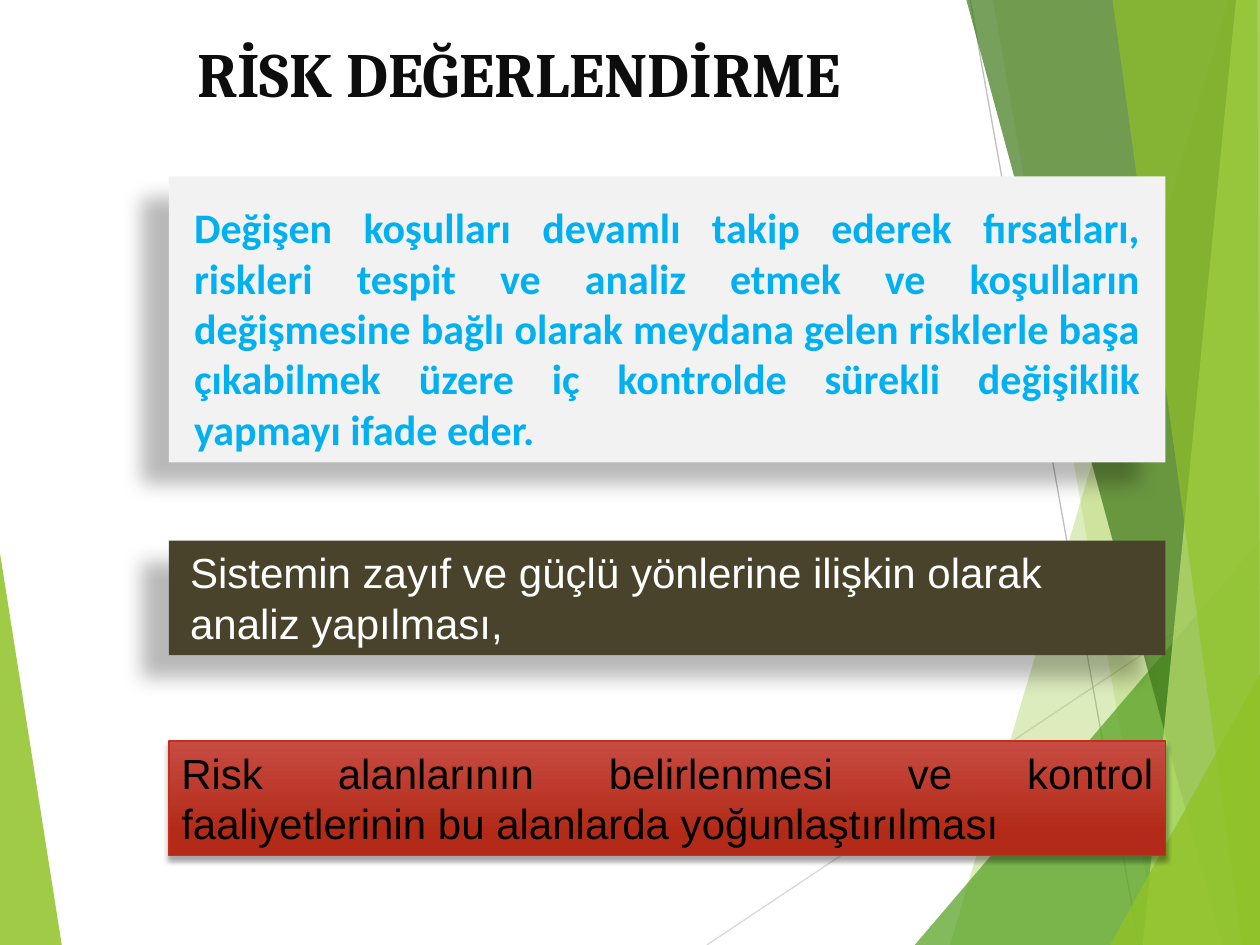
"""Build the risk assessment slide."""
from lxml import etree
from pptx import Presentation
from pptx.dml.color import RGBColor
from pptx.enum import shapes, text
from pptx.oxml.ns import qn
from pptx.util import Inches, Pt

FACETS = [
    ("90C226", 85, [(0, 4.39), (0.49, 7.5), (0, 7.5)]),
    ("90C226", 30, [(9.75, 0), (7.54, 7.5), (10, 7.5), (10, 0)]),
    ("90C226", 20, [(7.88, 0), (9.19, 7.5), (10, 7.5), (10, 0)]),
    ("54A021", 72, [(7.26, 7.5), (10, 4.29), (10, 7.5)]),
    ("3F7819", 70, [(7.67, 0), (9.7, 7.5), (10, 7.5), (10, 0)]),
    ("C0E474", 70, [(9.81, 0), (9.07, 7.5), (10, 7.5), (10, 0)]),
    ("90C226", 65, [(8.83, 0), (9.86, 7.5), (10, 7.5), (9.98, 0)]),
    ("90C226", 80, [(8.81, 7.5), (10, 5.35), (10, 7.5)]),
]
RAYS = [("D9D9D9", (5.61, 7.5), (10, 4.57)), ("BFBFBF", (7.7, 0), (9.04, 7.5))]
BOX_LEFT, BOX_WIDTH = 1.34, 7.91
DEEP_SHADOW = (28, 11.8, 19.7, 141)
SOFT_SHADOW = (35, 3, 2, 90)
DEFINITION = (
    "Değişen koşulları devamlı takip ederek fırsatları, riskleri tespit ve analiz "
    "etmek ve koşulların değişmesine bağlı olarak meydana gelen risklerle başa "
    "çıkabilmek üzere iç kontrolde sürekli değişiklik yapmayı ifade eder."
)
ANALYSIS = "Sistemin zayıf ve güçlü yönlerine ilişkin olarak analiz yapılması,"
FOCUS = ("Risk alanlarının belirlenmesi ve kontrol faaliyetlerinin "
         "bu alanlarda yoğunlaştırılması")


def color(value):
    """Turn a hex string into a colour."""
    return RGBColor.from_string(value)


def set_alpha(color_element, percent):
    """Set the opacity of a colour element."""
    etree.SubElement(color_element, qn("a:alpha")).set("val", str(percent * 1000))


def add_facet(slide, fill, opacity, points):
    """Draw one translucent polygon of the background."""
    corners = [(Inches(x), Inches(y)) for x, y in points]
    builder = slide.shapes.build_freeform(*corners[0])
    builder.add_line_segments(corners[1:])
    shape = builder.convert_to_shape()
    shape.shadow.inherit = False
    shape.fill.solid()
    shape.fill.fore_color.rgb = color(fill)
    set_alpha(shape._element.spPr.find(".//" + qn("a:srgbClr")), opacity)
    shape.line.fill.background()


def add_ray(slide, line_color, start, end):
    """Draw one thin background line."""
    points = [Inches(value) for value in start + end]
    ray = slide.shapes.add_connector(shapes.MSO_CONNECTOR.STRAIGHT, *points)
    ray.line.color.rgb = color(line_color)
    ray.line.width = Pt(0.75)
    etree.SubElement(ray._element.spPr, qn("a:effectLst"))


def place(shape, left, top, width, height):
    """Move and size a shape in inches."""
    shape.left, shape.top = Inches(left), Inches(top)
    shape.width, shape.height = Inches(width), Inches(height)


def set_shadow(shape, opacity, blur, distance, angle):
    """Give a shape an outer shadow."""
    shape.shadow.inherit = False
    effects = shape._element.spPr.find(qn("a:effectLst"))
    shadow = etree.SubElement(effects, qn("a:outerShdw"))
    shadow.set("blurRad", str(int(Pt(blur))))
    shadow.set("dist", str(int(Pt(distance))))
    shadow.set("dir", str(angle * 60000))
    shadow.set("algn", "ctr")
    shadow.set("rotWithShape", "0")
    black = etree.SubElement(shadow, qn("a:srgbClr"))
    black.set("val", "000000")
    set_alpha(black, opacity)


def write(shape, words, font, size, font_color, align, bold=False, indent=0, inset=None):
    """Write one formatted paragraph without a bullet."""
    frame = shape.text_frame
    frame.word_wrap = True
    frame.auto_size = text.MSO_AUTO_SIZE.NONE
    frame.vertical_anchor = text.MSO_ANCHOR.TOP
    if inset is not None:
        frame.margin_left = frame.margin_right = Inches(inset)
        frame.margin_top = frame.margin_bottom = Inches(inset)
    paragraph = frame.paragraphs[0]
    paragraph.alignment = align
    paragraph.space_before = Pt(0)
    properties = paragraph._p.get_or_add_pPr()
    properties.set("marL", str(int(Inches(indent))))
    properties.set("indent", "0")
    etree.SubElement(properties, qn("a:buNone"))
    run = paragraph.add_run()
    run.text = words
    run.font.name, run.font.size, run.font.bold = font, Pt(size), bold
    run.font.color.rgb = color(font_color)


def add_box(slide, top, height):
    """Add a borderless rectangle in the text column."""
    box = slide.shapes.add_shape(shapes.MSO_SHAPE.RECTANGLE, 0, 0, 0, 0)
    place(box, BOX_LEFT, top, BOX_WIDTH, height)
    box.line.fill.background()
    return box


def fill_solid(shape, value):
    """Fill a shape with one colour."""
    shape.fill.solid()
    shape.fill.fore_color.rgb = color(value)


def fill_gradient(shape, stops):
    """Fill a shape with a two-colour gradient running downwards."""
    shape.fill.gradient()
    shape.fill.gradient_angle = 270
    for stop, (position, value) in zip(shape.fill.gradient_stops, stops):
        stop.position = position
        stop.color.rgb = color(value)


def main():
    """Build and save the slide."""
    presentation = Presentation()
    presentation.slide_width, presentation.slide_height = Inches(10), Inches(7.5)
    slide = presentation.slides.add_slide(presentation.slide_layouts[1])
    title, definition = slide.shapes.title, slide.placeholders[1]

    add_facet(slide, *FACETS[0])
    for ray in RAYS:
        add_ray(slide, *ray)
    for facet in FACETS[1:]:
        add_facet(slide, *facet)
    for placeholder in (title, definition):
        slide.shapes._spTree.append(placeholder._element)

    place(title, 0.28, 0.22, 7.68, 1.01)
    write(title, "RİSK DEĞERLENDİRME", "Cambria", 36, "0D0D0D",
          text.PP_ALIGN.CENTER, bold=True)

    place(definition, BOX_LEFT, 1.4, BOX_WIDTH, 2.27)
    fill_solid(definition, "F2F2F2")
    set_shadow(definition, *DEEP_SHADOW)
    write(definition, DEFINITION, "Calibri", 24, "00B0F0",
          text.PP_ALIGN.JUSTIFY, bold=True, inset=0.2)

    analysis = add_box(slide, 4.29, 0.91)
    fill_solid(analysis, "48432A")
    set_shadow(analysis, *DEEP_SHADOW)
    write(analysis, ANALYSIS, "Arial", 24, "FFFFFF", text.PP_ALIGN.LEFT, indent=0.07)

    focus = add_box(slide, 5.88, 0.91)
    fill_gradient(focus, [(0, "C74B42"), (0.78, "B32B18")])
    focus.line.color.rgb = color("C42F1A")
    focus.line.width = Pt(1)
    set_shadow(focus, *SOFT_SHADOW)
    write(focus, FOCUS, "Arial", 24, "000000", text.PP_ALIGN.JUSTIFY)

    presentation.save("out.pptx")


if __name__ == "__main__":
    main()
